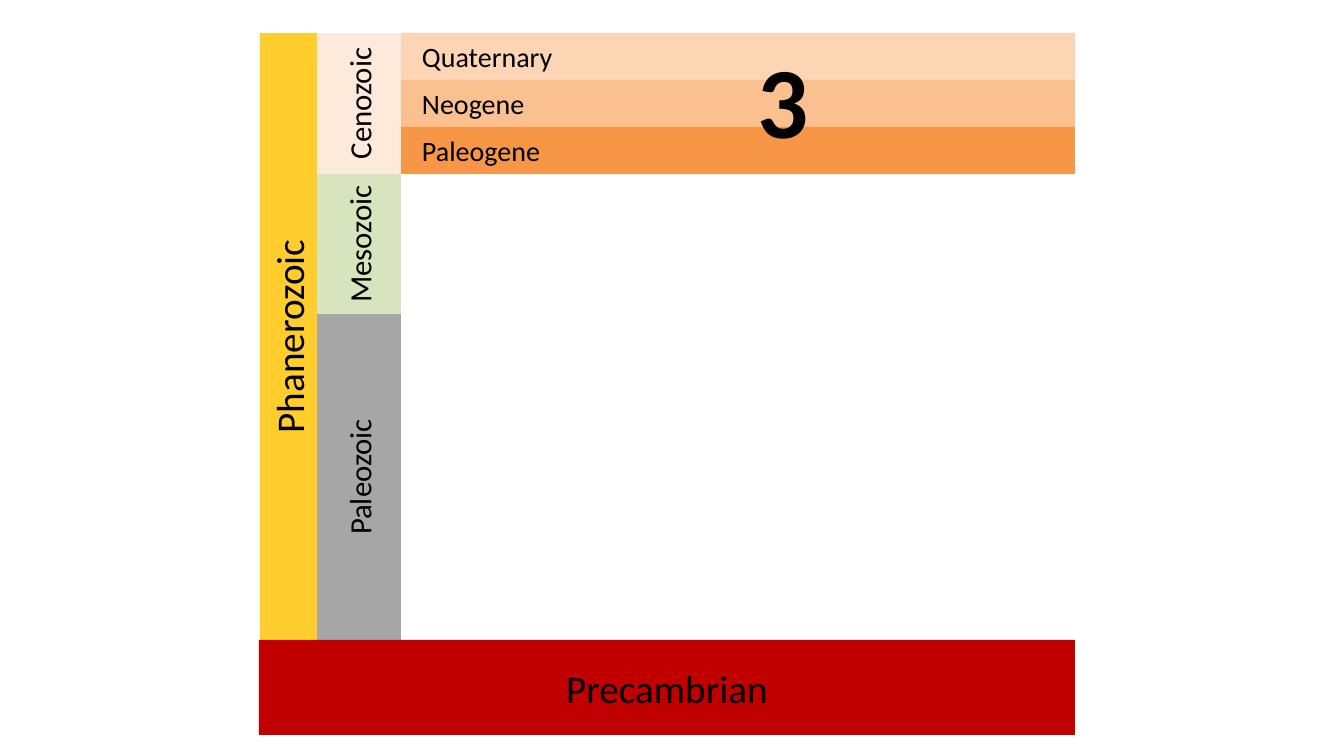
from pptx import Presentation
from pptx.dml.color import RGBColor
from pptx.enum.shapes import MSO_SHAPE as Shape
from pptx.enum.text import MSO_ANCHOR as Anchor, PP_ALIGN as Align
from pptx.util import Emu, Pt

BLACK = RGBColor(0x00, 0x00, 0x00)
YELLOW = RGBColor(0xFF, 0xCD, 0x2D)
RED = RGBColor(0xC0, 0x00, 0x00)
GREY = RGBColor(0xA6, 0xA6, 0xA6)
GREEN = RGBColor(0xD7, 0xE4, 0xBD)
CREAM = RGBColor(0xFD, 0xEA, 0xDA)
PEACH = RGBColor(0xFC, 0xD5, 0xB5)
APRICOT = RGBColor(0xFA, 0xC0, 0x90)
ORANGE = RGBColor(0xF7, 0x96, 0x46)

PERIODS = [("Quaternary", PEACH), ("Neogene", APRICOT), ("Paleogene", ORANGE)]
ERAS = [("Cenozoic", CREAM, 141), ("Mesozoic", GREEN, 140), ("Paleozoic", GREY, 326)]
EON = ("Phanerozoic", YELLOW)
BASE = ("Precambrian", RED)
PERIOD_COUNT = "3"

EMU_PER_PX = 914400 / 100.8
TOP, BOTTOM = 33, 735
EON_LEFT, ERA_LEFT, PERIOD_LEFT, RIGHT = 260, 317, 401, 1075
PERIOD_HEIGHT = 47
PERIOD_INDENT = 21


def px(length):
    return Emu(round(length * EMU_PER_PX))


def write(box, text, size, bold=False, align=Align.LEFT, anchor=Anchor.MIDDLE):
    frame = box.text_frame
    frame.word_wrap = True
    frame.vertical_anchor = anchor
    para = frame.paragraphs[0]
    para.alignment = align
    span = para.add_run()
    span.text = text
    font = span.font
    font.name, font.size, font.bold = "Calibri", Pt(size), bold
    font.color.rgb = BLACK


def add_block(page, left, top, width, height, fill, text, size,
              align=Align.CENTER, upward=False):
    """Add a filled block; upward turns it so that its text reads bottom to top."""
    if upward:
        left, top = left + (width - height) / 2, top + (height - width) / 2
        width, height = height, width
    box = page.shapes.add_shape(Shape.RECTANGLE, px(left), px(top), px(width), px(height))
    box.rotation = 270 if upward else 0
    box.shadow.inherit = False
    box.fill.solid()
    box.fill.fore_color.rgb = fill
    box.line.fill.background()
    write(box, text, size, align=align)
    return box


def main():
    deck = Presentation()
    deck.slide_width, deck.slide_height = px(1344), px(756)
    page = deck.slides.add_slide(deck.slide_layouts[6])

    for row, (name, fill) in enumerate(PERIODS):
        box = add_block(page, PERIOD_LEFT, TOP + row * PERIOD_HEIGHT, RIGHT - PERIOD_LEFT,
                        PERIOD_HEIGHT, fill, name, 20, align=Align.LEFT)
        box.text_frame.margin_left = px(PERIOD_INDENT)

    era_top = TOP
    for name, fill, height in ERAS:
        add_block(page, ERA_LEFT, era_top, PERIOD_LEFT - ERA_LEFT, height,
                  fill, name, 22, upward=True)
        era_top += height

    name, fill = EON
    add_block(page, EON_LEFT, TOP, ERA_LEFT - EON_LEFT, era_top - TOP,
              fill, name, 28, upward=True)
    name, fill = BASE
    add_block(page, EON_LEFT - 1, era_top, RIGHT - EON_LEFT + 1, BOTTOM - era_top,
              fill, name, 28)

    count_box = page.shapes.add_textbox(px(748), px(TOP), px(143), px(132))
    write(count_box, PERIOD_COUNT, 72, bold=True, anchor=Anchor.TOP)

    deck.save("out.pptx")


if __name__ == "__main__":
    main()
